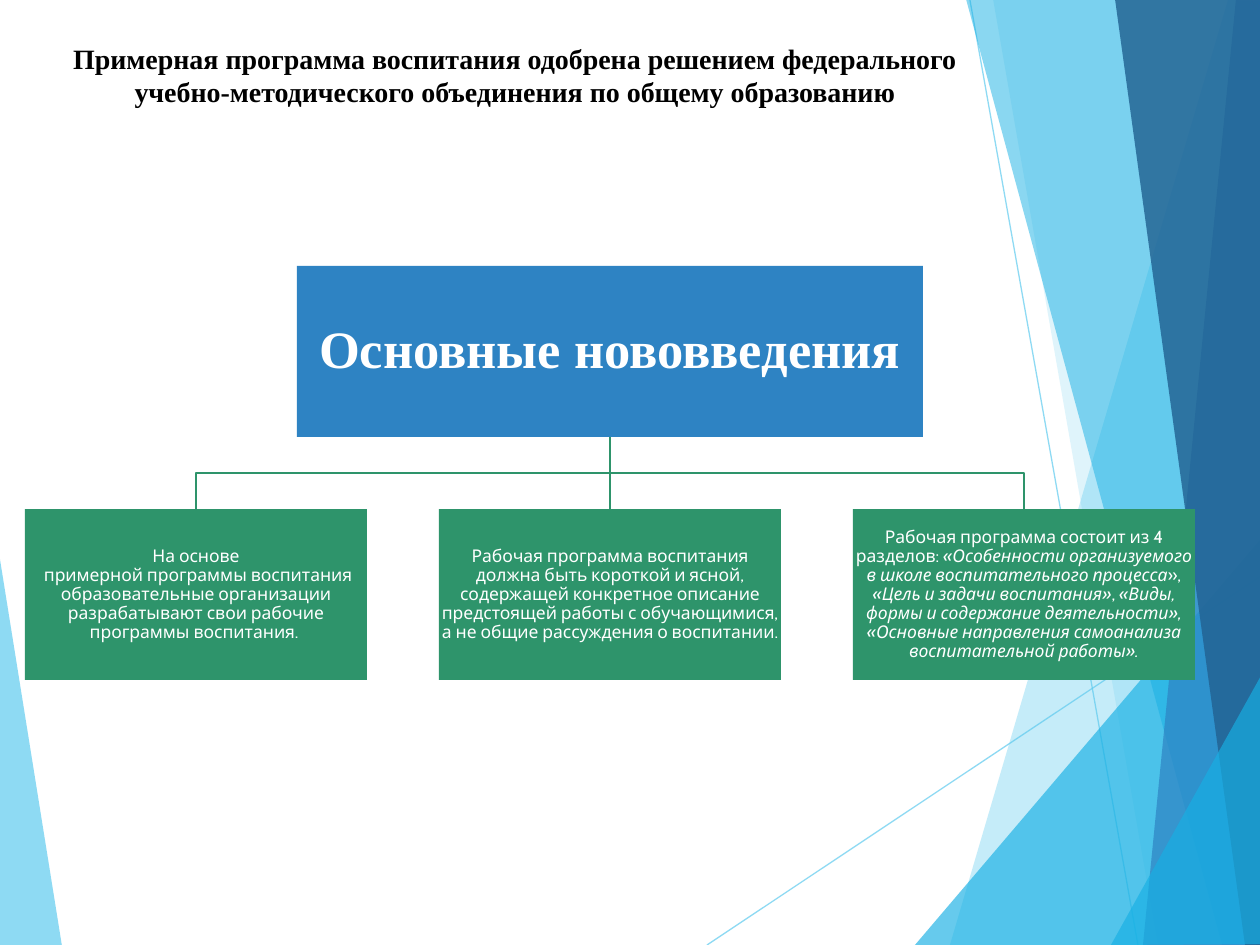
from pptx import Presentation
from pptx.dml.color import RGBColor
from pptx.enum.shapes import MSO_CONNECTOR, MSO_SHAPE
from pptx.enum.text import MSO_ANCHOR, PP_ALIGN
from pptx.oxml.ns import qn
from pptx.util import Pt
from lxml.etree import SubElement

PX = 914400 / 126
SERIF, SANS = "Times New Roman", "Cabin"
SKY, CYAN, BLUE, NAVY, GREEN = "5FCBEF", "17B0E4", "2E83C3", "226292", "2E946B"

TITLE = ("Примерная программа воспитания одобрена решением федерального "
         "учебно-методического объединения по общему образованию")
ROOT = "Основные нововведения"
BRANCHES = [
    [("На основе\v примерной программы воспитания образовательные организации "
      "разрабатывают свои рабочие программы воспитания. ", False)],
    [("Рабочая программа воспитания должна быть короткой и ясной, содержащей "
      "конкретное описание предстоящей работы с обучающимися, а не общие "
      "рассуждения о воспитании.", False)],
    [("Рабочая программа состоит из 4 разделов: ", False),
     ("«Особенности организуемого в школе воспитательного процесса", True),
     ("», ", False),
     ("«Цель и задачи воспитания»", True),
     (", ", False),
     ("«Виды, формы и содержание деятельности», «Основные направления "
      "самоанализа воспитательной работы».", True)],
]

LEFT_FACET = (SKY, 70, [(-1, 553), (62, 946), (-1, 945)])
RIGHT_FACETS = [
    (SKY, 36, [(1228, 0), (950, 945), (1262, 946), (1261, 1)]),
    (SKY, 20, [(993, -1), (1158, 945), (1261, 945), (1261, -1)]),
    (CYAN, 66, [(915, 945), (1260, 540), (1261, 945)]),
    (CYAN, 50, [(966, -1), (1222, 945), (1261, 944), (1261, -1)]),
    (BLUE, 70, [(1236, -1), (1143, 945), (1261, 945), (1260, -1)]),
    (NAVY, 82, [(1115, -1), (1245, 945), (1262, 945), (1260, -1)]),
    (CYAN, 66, [(1111, 945), (1262, 674), (1262, 944)]),
]
RAYS = [((707, 945), (1261, 576)), ((970, 0), (1138, 945))]

BOX_HEIGHT = 171
ROOT_LEFT, ROOT_TOP, ROOT_WIDTH = 297, 266, 626
BRANCH_LEFT, BRANCH_TOP, BRANCH_WIDTH, BRANCH_STEP = 25, 509, 342, 414


def px(*lengths):
    """Convert pixel lengths to EMU."""
    return [round(length * PX) for length in lengths]


def paint(color_format, color, opacity=100):
    """Set a hex colour and its opacity in percent."""
    color_format.rgb = RGBColor.from_string(color)
    if opacity < 100:
        value = color_format._xFill.find(qn("a:srgbClr"))
        SubElement(value, qn("a:alpha"), val=str(opacity * 1000))


def add_path(slide, points, closed):
    """Draw straight segments through the points."""
    builder = slide.shapes.build_freeform(*points[0], scale=PX)
    builder.add_line_segments(points[1:], close=closed)
    outline = builder.convert_to_shape()
    outline.shadow.inherit = False
    return outline


def add_facet(slide, color, opacity, points):
    """Add one translucent polygon of the background."""
    facet = add_path(slide, points, True)
    facet.fill.solid()
    paint(facet.fill.fore_color, color, opacity)
    facet.line.fill.background()


def stroke(line, color, width, opacity=100):
    """Give a line its colour, width and opacity."""
    line.width = Pt(width)
    line.fill.solid()
    paint(line.fill.fore_color, color, opacity)


def add_straight(slide, start, end, color, width, opacity=100):
    """Add a straight connector without a shadow."""
    straight = slide.shapes.add_connector(
        MSO_CONNECTOR.STRAIGHT, *px(*start, *end))
    stroke(straight.line, color, width, opacity)
    SubElement(straight._element.spPr, qn("a:effectLst"))


def add_elbow(slide, points):
    """Add a bent branch line."""
    elbow = add_path(slide, points, False)
    elbow.fill.background()
    stroke(elbow.line, GREEN, 1.5)


def write(frame, parts, font, size, color, bold=False):
    """Fill a frame with one centred paragraph of plain and italic parts."""
    frame.word_wrap = True
    paragraph = frame.paragraphs[0]
    paragraph.alignment = PP_ALIGN.CENTER
    paragraph.text = parts[0][0]
    for wording, _ in parts[1:]:
        paragraph.add_run().text = wording
    italics = [italic for _, italic in parts]
    italics = [italics[0]] * (len(paragraph.runs) - len(parts)) + italics
    for run, italic in zip(paragraph.runs, italics):
        run.font.name = font
        run.font.size = Pt(size)
        run.font.bold = bold
        run.font.italic = italic
        paint(run.font.color, color)
    return paragraph


def add_title(slide):
    """Add the slide heading."""
    heading = slide.shapes.add_textbox(*px(44, 35, 942, 100))
    write(heading.text_frame, [(TITLE, False)], SERIF, 16, "000000", True)


def add_box(slide, place, fill, parts, font, size, inset, bold=False):
    """Add a filled box of the chart with its text."""
    box = slide.shapes.add_shape(MSO_SHAPE.RECTANGLE, *px(*place))
    box.shadow.inherit = False
    box.fill.solid()
    paint(box.fill.fore_color, fill)
    box.line.fill.background()
    frame = box.text_frame
    frame.vertical_anchor = MSO_ANCHOR.MIDDLE
    frame.margin_left = frame.margin_right = Pt(inset)
    frame.margin_top = frame.margin_bottom = Pt(inset)
    write(frame, parts, font, size, "FFFFFF", bold).line_spacing = 0.9


def add_background(slide):
    """Draw the facets and thin rays behind the content."""
    add_facet(slide, *LEFT_FACET)
    for start, end in RAYS:
        add_straight(slide, start, end, SKY, 0.75, 70)
    for facet in RIGHT_FACETS:
        add_facet(slide, *facet)


def add_hierarchy(slide):
    """Draw the root, its branches and the lines between them."""
    root_center = ROOT_LEFT + ROOT_WIDTH // 2
    root_bottom = ROOT_TOP + BOX_HEIGHT
    bend = (root_bottom + BRANCH_TOP) // 2
    lefts = [BRANCH_LEFT + i * BRANCH_STEP for i in range(len(BRANCHES))]
    for left in lefts:
        center = left + BRANCH_WIDTH // 2
        start, end = (root_center, root_bottom), (center, BRANCH_TOP)
        if center == root_center:
            add_straight(slide, start, end, GREEN, 1.5)
        else:
            add_elbow(slide, [start, (root_center, bend), (center, bend), end])
    add_box(slide, (ROOT_LEFT, ROOT_TOP, ROOT_WIDTH, BOX_HEIGHT), BLUE,
            [(ROOT, False)], SERIF, 30, 1.5, True)
    for left, parts in zip(lefts, BRANCHES):
        add_box(slide, (left, BRANCH_TOP, BRANCH_WIDTH, BOX_HEIGHT), GREEN,
                parts, SANS, 10, 0.5)


def main():
    """Build and save the slide."""
    deck = Presentation()
    deck.slide_width, deck.slide_height = px(1260, 945)
    slide = deck.slides.add_slide(deck.slide_layouts[6])
    add_background(slide)
    add_title(slide)
    add_hierarchy(slide)
    deck.save("out.pptx")


if __name__ == "__main__":
    main()
